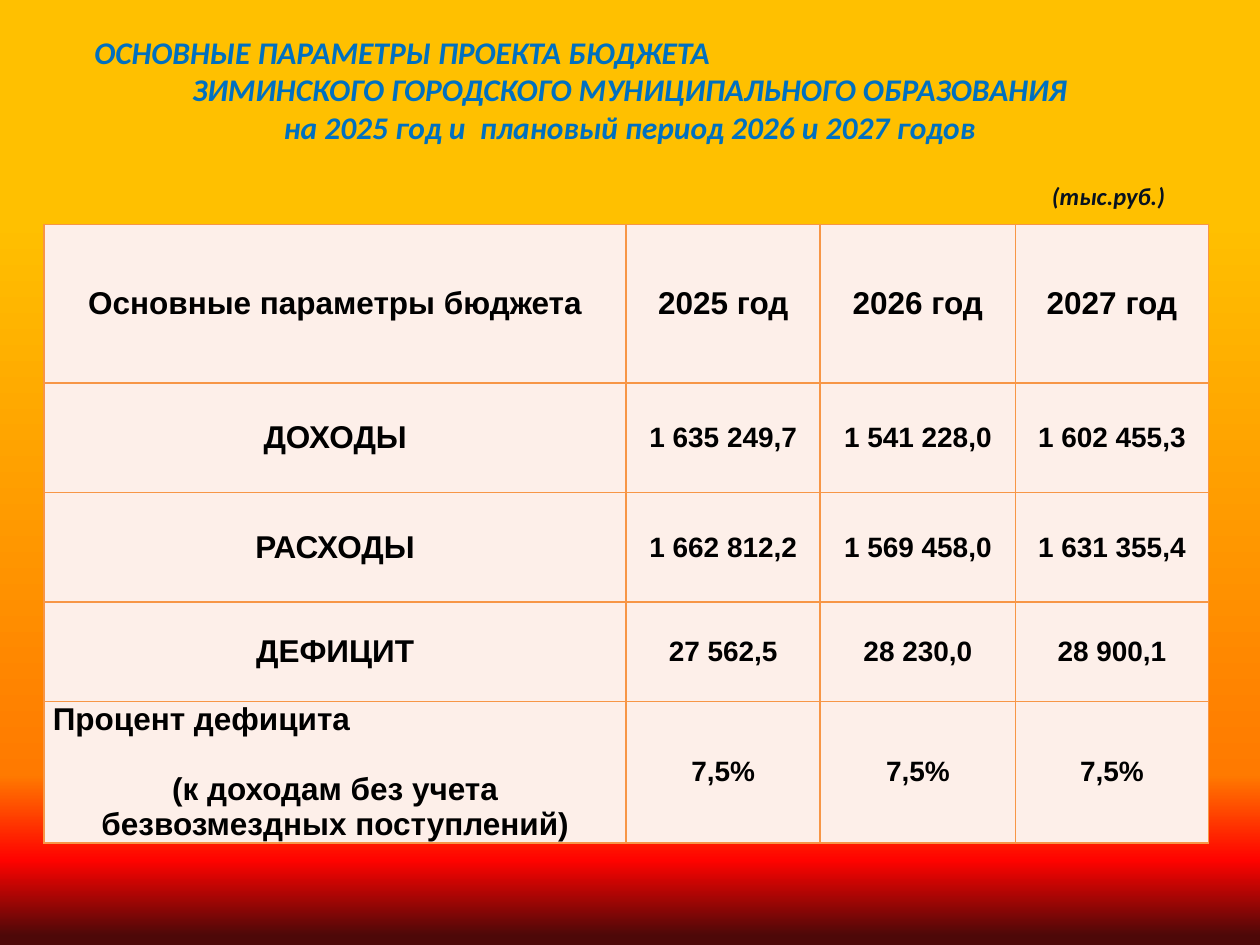
from lxml.etree import SubElement
from pptx import Presentation
from pptx.dml.color import RGBColor
from pptx.enum.text import MSO_ANCHOR as Anchor, PP_ALIGN as Align
from pptx.oxml.ns import qn
from pptx.util import Inches, Pt

COLORS = {
    "title": "0070C0",
    "unit": "08121F",
    "text": "000000",
    "cell": "FDEFE9",
    "border": "F79646",
}
BACKGROUND_STOPS = [(23, "FFC000"), (82, "FF7A00"), (91, "FF0300"), (99, "4D0808")]
COLUMN_WIDTHS = [4.62, 1.54, 1.55, 1.53]
ROW_HEIGHTS = [1.26, 0.87, 0.87, 0.79, 1.12]
BUDGET_ROWS = [
    ["Основные параметры бюджета", "2025 год", "2026 год", "2027 год"],
    ["ДОХОДЫ", "1 635 249,7", "1 541 228,0", "1 602 455,3"],
    ["РАСХОДЫ", "1 662 812,2", "1 569 458,0", "1 631 355,4"],
    ["ДЕФИЦИТ", "27 562,5", "28 230,0", "28 900,1"],
    ["", "7,5%", "7,5%", "7,5%"],
]


def write_paragraph(frame, text, size=18, font="Arial", color="text", italic=False,
                    align=Align.CENTER, indent=0, space_after=0):
    """Fill the empty first paragraph of the frame, or add a new one."""
    para = frame.paragraphs[0] if not frame.text else frame.add_paragraph()
    para.alignment = align
    para.space_after = Pt(space_after)
    if indent:
        para._p.get_or_add_pPr().set("marL", str(Inches(indent)))
    span = para.add_run()
    span.text = text
    span.font.size = Pt(size)
    span.font.name = font
    span.font.bold = True
    span.font.italic = italic
    span.font.color.rgb = RGBColor.from_string(COLORS[color])


def add_text_box(page, left, top, width, height):
    box = page.shapes.add_textbox(Inches(left), Inches(top), Inches(width), Inches(height))
    box.text_frame.word_wrap = True
    return box.text_frame


def paint_background(page):
    fill = page.background.fill
    fill.gradient()
    fill.gradient_angle = 270
    stops = next(page._element.iter(qn("a:gsLst")))
    for stop in list(stops):
        stops.remove(stop)
    for percent, color in BACKGROUND_STOPS:
        stop = SubElement(stops, qn("a:gs"), pos=str(percent * 1000))
        SubElement(stop, qn("a:srgbClr"), val=color)


def style_cell(cell):
    cell.vertical_anchor = Anchor.MIDDLE
    cell.margin_left = cell.margin_right = Inches(0.07)
    cell.margin_top = cell.margin_bottom = 0
    properties = cell._tc.get_or_add_tcPr()
    for side in ("a:lnL", "a:lnR", "a:lnT", "a:lnB"):
        line = SubElement(properties, qn(side), w=str(Pt(1)))
        solid = SubElement(line, qn("a:solidFill"))
        SubElement(solid, qn("a:srgbClr"), val=COLORS["border"])
    cell.fill.solid()
    cell.fill.fore_color.rgb = RGBColor.from_string(COLORS["cell"])
    # The schema wants the borders ahead of the fill.
    properties.append(properties.find(qn("a:solidFill")))


def add_budget_table(page):
    table = page.shapes.add_table(
        len(ROW_HEIGHTS), len(COLUMN_WIDTHS), Inches(0.35), Inches(1.78),
        Inches(sum(COLUMN_WIDTHS)), Inches(sum(ROW_HEIGHTS))).table
    for column, width in zip(table.columns, COLUMN_WIDTHS):
        column.width = Inches(width)
    for row, height in zip(table.rows, ROW_HEIGHTS):
        row.height = Inches(height)
    for r, values in enumerate(BUDGET_ROWS):
        for c, value in enumerate(values):
            cell = table.cell(r, c)
            style_cell(cell)
            if value:
                write_paragraph(cell.text_frame, value, size=16 if r and c else 18)
    percent_label = table.cell(len(BUDGET_ROWS) - 1, 0).text_frame
    write_paragraph(percent_label, "Процент дефицита", align=Align.LEFT, space_after=20)
    write_paragraph(percent_label, "(к доходам без учета безвозмездных поступлений)")


def add_title(page):
    frame = add_text_box(page, 0, 0.21, 10, 1.01)
    style = dict(font="Calibri", color="title", italic=True)
    write_paragraph(frame, "ОСНОВНЫЕ ПАРАМЕТРЫ ПРОЕКТА БЮДЖЕТА",
                    align=Align.LEFT, indent=0.65, **style)
    write_paragraph(frame, "ЗИМИНСКОГО ГОРОДСКОГО МУНИЦИПАЛЬНОГО ОБРАЗОВАНИЯ", **style)
    write_paragraph(frame, "на 2025 год и  плановый период 2026 и 2027 годов", **style)


def add_unit(page):
    frame = add_text_box(page, 7.91, 1.39, 1.91, 0.34)
    write_paragraph(frame, "(тыс.руб.)", size=14, font="Calibri", color="unit",
                    italic=True, align=Align.LEFT, indent=0.34)


def main():
    deck = Presentation()
    deck.slide_width, deck.slide_height = Inches(10), Inches(7.5)
    page = deck.slides.add_slide(deck.slide_layouts[6])
    paint_background(page)
    add_budget_table(page)
    add_title(page)
    add_unit(page)
    deck.save("out.pptx")


if __name__ == "__main__":
    main()
